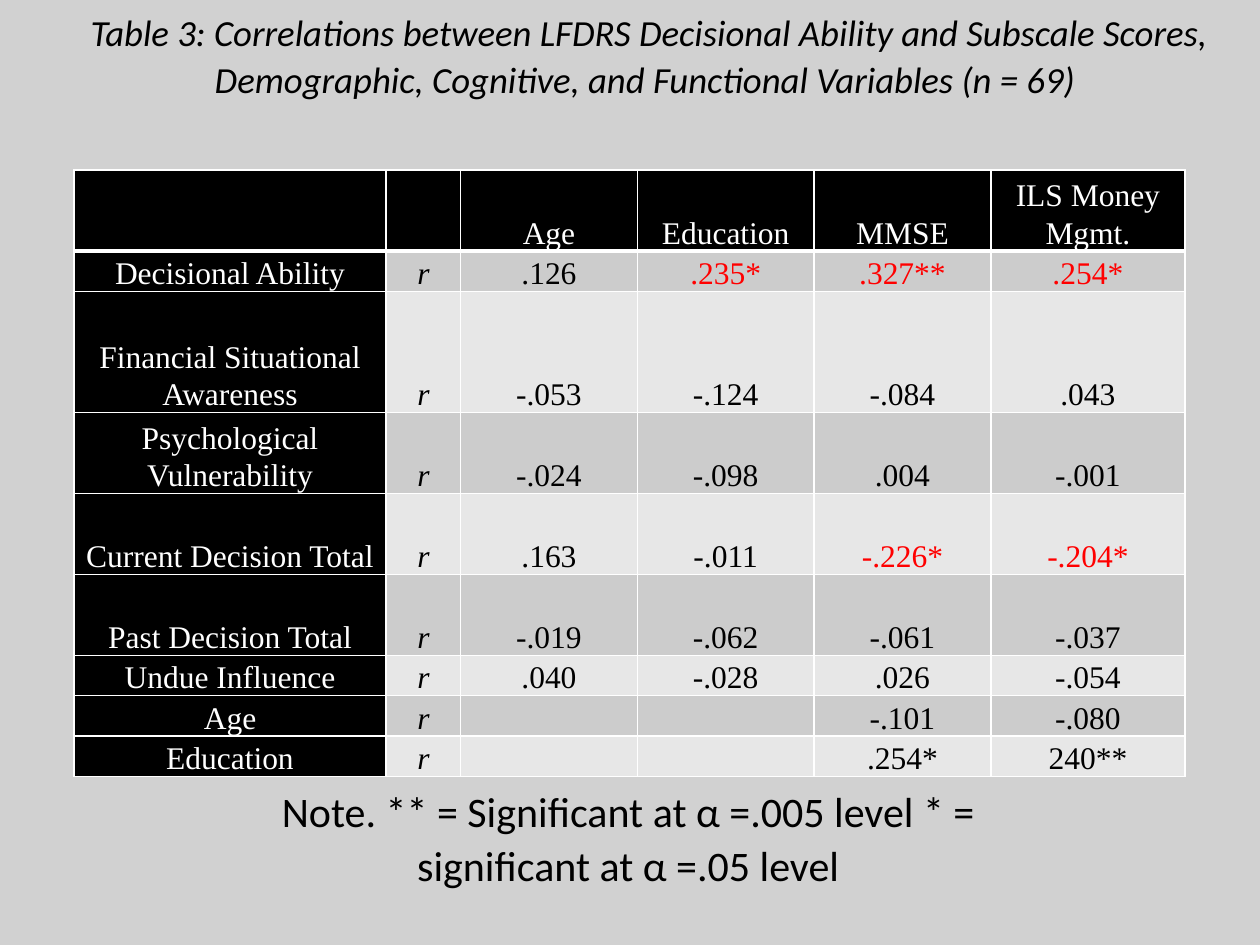
from lxml import etree
from pptx import Presentation
from pptx.dml.color import RGBColor
from pptx.enum.text import MSO_ANCHOR, PP_ALIGN
from pptx.oxml.ns import qn
from pptx.util import Pt

CENTER = PP_ALIGN.CENTER
BOTTOM = MSO_ANCHOR.BOTTOM

BACKGROUND = RGBColor(0xD1, 0xD1, 0xD1)
BLACK = RGBColor(0, 0, 0)
WHITE = RGBColor(255, 255, 255)
RED = RGBColor(255, 0, 0)
BANDS = (RGBColor(0xE7, 0xE7, 0xE7), RGBColor(0xCC, 0xCC, 0xCC))

COLUMN_WIDTHS = (178.5, 42.5, 101, 101, 101, 111)
LINE_HEIGHT = 23.1
ROW_LINES = (2, 1, 3, 2, 2, 2, 1, 1, 1)
LAST_SUBSCALE_ROW = 6
ROWS = (
    ("", "", "Age", "Education", "MMSE", "ILS Money Mgmt."),
    ("Decisional Ability", "r", ".126", ".235*", ".327**", ".254*"),
    ("Financial Situational Awareness", "r", "-.053", "-.124", "-.084", ".043"),
    ("Psychological Vulnerability", "r", "-.024", "-.098", ".004", "-.001"),
    ("Current Decision Total", "r", ".163", "-.011", "-.226*", "-.204*"),
    ("Past Decision Total", "r", "-.019", "-.062", "-.061", "-.037"),
    ("Undue Influence", "r", ".040", "-.028", ".026", "-.054"),
    ("Age", "r", "", "", "-.101", "-.080"),
    ("Education", "r", "", "", ".254*", "240**"),
)


def format_paragraph(p, font, size, color, italic=False):
    p.alignment = CENTER
    p.line_spacing = 1.07
    # An empty paragraph keeps its size in the paragraph's end mark
    if not p.runs:
        etree.SubElement(p._p, qn("a:endParaRPr"), sz=str(size * 100))
    for r in p.runs:
        r.font.name = font
        r.font.size = Pt(size)
        r.font.color.rgb = color
        r.font.italic = italic


def add_caption(slide, left, top, width, height, text, size, italic=False, inset=7.2):
    box = slide.shapes.add_textbox(Pt(left), Pt(top), Pt(width), Pt(height))
    tf = box.text_frame
    tf.word_wrap = True
    tf.margin_left = tf.margin_right = Pt(inset)
    tf.text = text
    format_paragraph(tf.paragraphs[0], "Calibri", size, BLACK, italic)


def set_borders(cell, bottom):
    tc_pr = cell._tc.get_or_add_tcPr()
    # Borders come before the fill in the cell's properties
    for i, (side, width) in enumerate((("L", 1), ("R", 1), ("T", 1), ("B", bottom))):
        line = etree.Element(qn(f"a:ln{side}"), w=str(Pt(width)))
        fill = etree.SubElement(line, qn("a:solidFill"))
        etree.SubElement(fill, qn("a:srgbClr"), val=str(WHITE))
        tc_pr.insert(i, line)


def add_correlation_table(slide, left, top):
    frame = slide.shapes.add_table(
        len(ROWS), len(COLUMN_WIDTHS), Pt(left), Pt(top),
        Pt(sum(COLUMN_WIDTHS)), Pt(sum(ROW_LINES) * LINE_HEIGHT))
    table = frame.table
    for column, width in zip(table.columns, COLUMN_WIDTHS):
        column.width = Pt(width)
    for row, lines in zip(table.rows, ROW_LINES):
        row.height = Pt(lines * LINE_HEIGHT)

    for i, values in enumerate(ROWS):
        for j, value in enumerate(values):
            cell = table.cell(i, j)
            is_heading = i == 0 or j == 0
            cell.text = value
            cell.vertical_anchor = BOTTOM
            cell.margin_left = cell.margin_right = Pt(4.5)
            cell.margin_top = cell.margin_bottom = 0
            cell.fill.solid()
            cell.fill.fore_color.rgb = BLACK if is_heading else BANDS[i % 2]
            set_borders(cell, bottom=3 if i == 0 else 1)

            # Significant subscale correlations stand out in red
            if is_heading:
                color = WHITE
            elif "*" in value and i <= LAST_SUBSCALE_ROW:
                color = RED
            else:
                color = BLACK
            format_paragraph(cell.text_frame.paragraphs[0], "Times New Roman", 18,
                             color, italic=value == "r")


def main():
    prs = Presentation()
    prs.slide_width, prs.slide_height = Pt(720), Pt(540)
    slide = prs.slides.add_slide(prs.slide_layouts[6])
    slide.background.fill.solid()
    slide.background.fill.fore_color.rgb = BACKGROUND

    # Title
    add_caption(slide, 30, 0, 682, 62,
                "Table 3: Correlations between LFDRS Decisional Ability and Subscale "
                "Scores, Demographic, Cognitive, and Functional Variables (n = 69) ",
                21, italic=True)
    # Correlations
    add_correlation_table(slide, 42.2, 97.2)
    # Significance note
    add_caption(slide, 92, 443.5, 534, 31,
                "Note. ** = Significant at α =.005 level * = significant at α =.05 level",
                24, inset=18)
    prs.save("out.pptx")


if __name__ == "__main__":
    main()
